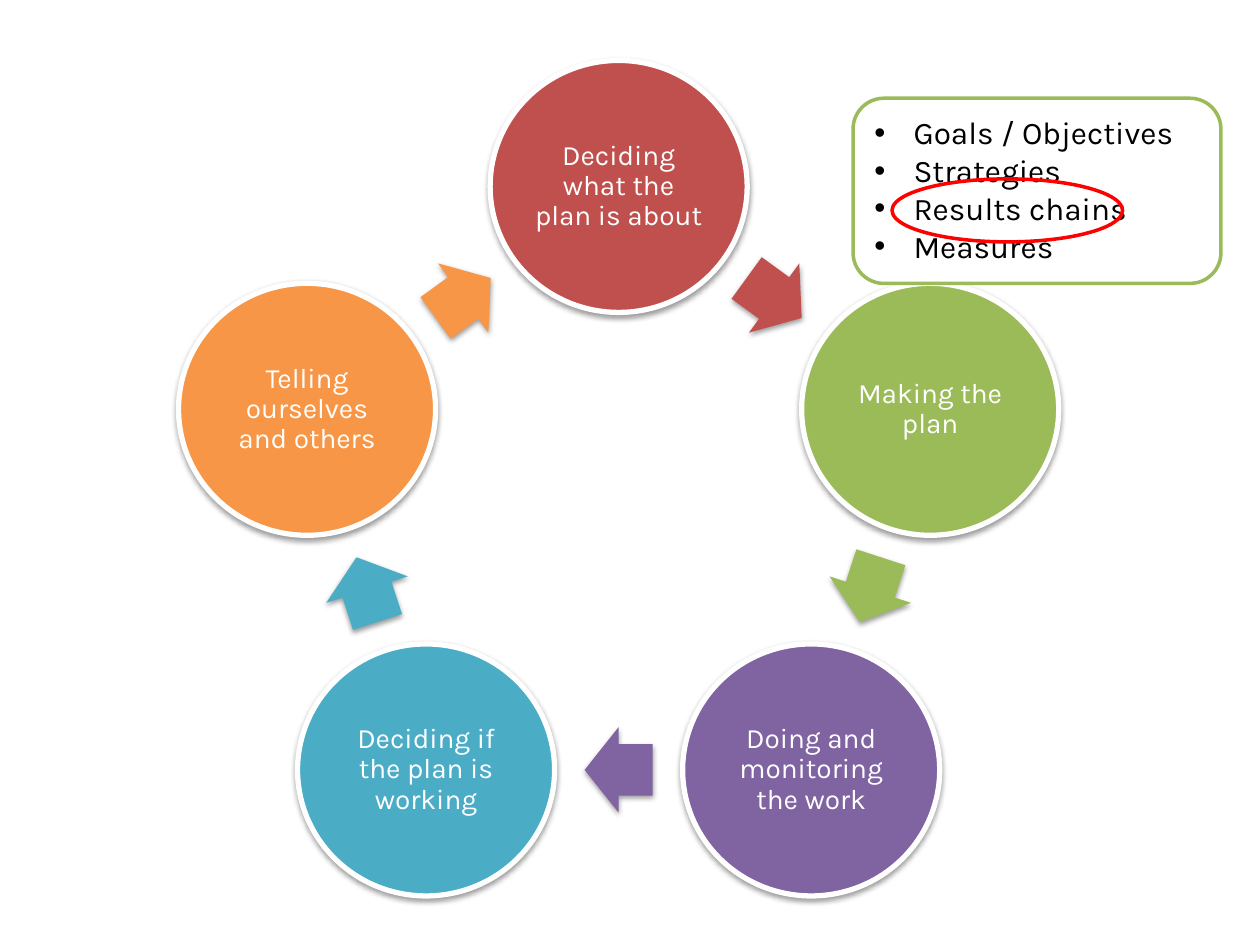
"""Build a slide with a five-step planning cycle and a call-out list."""
import math

import lxml.etree
import pptx
import pptx.dml.color
import pptx.enum.shapes
import pptx.enum.text
import pptx.oxml
import pptx.oxml.ns
import pptx.util

Inches = pptx.util.Inches
Pt = pptx.util.Pt
RGBColor = pptx.dml.color.RGBColor
Kind = pptx.enum.shapes.MSO_SHAPE
Align = pptx.enum.text.PP_ALIGN
Anchor = pptx.enum.text.MSO_ANCHOR

WHITE = RGBColor(0xFF, 0xFF, 0xFF)
BLACK = RGBColor(0x00, 0x00, 0x00)
BRICK = RGBColor(0xC0, 0x50, 0x4D)
GREEN = RGBColor(0x9B, 0xBB, 0x59)
PURPLE = RGBColor(0x80, 0x64, 0xA2)
TEAL = RGBColor(0x4B, 0xAC, 0xC6)
ORANGE = RGBColor(0xF7, 0x96, 0x46)
RED = RGBColor(0xFF, 0x00, 0x00)

FONT = "Karla"
MID = (4.91, 4.04)
STEPS = [
    ("Deciding what the plan is about", BRICK),
    ("Making the plan", GREEN),
    ("Doing and monitoring the work", PURPLE),
    ("Deciding if the plan is working", TEAL),
    ("Telling ourselves and others", ORANGE),
]
ITEMS = ["Goals / Objectives", "Strategies", "Results chains", "Measures"]


def add_form(slide, kind, box, fill=None, line=None, width=0):
    """Add a preset shape with plain fill and line."""
    form = slide.shapes.add_shape(kind, *[Inches(n) for n in box])
    form.shadow.inherit = False
    if fill is None:
        form.fill.background()
    else:
        form.fill.solid()
        form.fill.fore_color.rgb = fill
    if line is None:
        form.line.fill.background()
    else:
        form.line.color.rgb = line
        form.line.width = Pt(width)
    return form


def add_shade(form):
    """Give a shape a soft shadow straight below it."""
    name = pptx.oxml.ns.qn("a:effectLst")
    space = pptx.oxml.ns.nsdecls("a")
    form._element.spPr.find(name).append(pptx.oxml.parse_xml(
        f'<a:outerShdw {space} blurRad="{Pt(3.1)}" dist="{Pt(1.6)}" '
        'dir="5400000" rotWithShape="0"><a:srgbClr val="000000">'
        '<a:alpha val="38000"/></a:srgbClr></a:outerShdw>'))


def set_font(para, size, color):
    """Format every run of a paragraph."""
    for run in para.runs:
        run.font.name = FONT
        run.font.size = Pt(size)
        run.font.color.rgb = color


def ring_box(angle, reach, size):
    """Return the box centred at a clockwise angle on the ring."""
    turn = math.radians(angle)
    left = MID[0] + reach[0] * math.sin(turn) - size[0] / 2
    top = MID[1] - reach[1] * math.cos(turn) - size[1] / 2
    return left, top, *size


def add_step(slide, angle, text, color):
    """Add one round step with its label."""
    box = ring_box(angle, (2.6, 2.56), (2.04, 2))
    step = add_form(slide, Kind.OVAL, box, color, WHITE, 3)
    add_shade(step)
    frame = step.text_frame
    frame.word_wrap = True
    frame.vertical_anchor = Anchor.MIDDLE
    frame.margin_left = frame.margin_right = Inches(0.04)
    frame.margin_top = frame.margin_bottom = Inches(0.04)
    frame.text = text
    para = frame.paragraphs[0]
    para.alignment = Align.CENTER
    para.line_spacing = 0.9
    set_font(para, 16, WHITE)


def add_arrow(slide, angle, color):
    """Add the block arrow that leads on to the next step."""
    box = ring_box(angle, (2.1, 2.07), (0.54, 0.68))
    arrow = add_form(slide, Kind.RIGHT_ARROW, box, color)
    arrow.adjustments[0] = 0.6
    arrow.adjustments[1] = 0.5
    arrow.rotation = angle
    add_shade(arrow)


def add_list(slide, box, items):
    """Add the rounded call-out with its bullet list."""
    panel = add_form(slide, Kind.ROUNDED_RECTANGLE, box, WHITE, GREEN, 2)
    frame = panel.text_frame
    frame.word_wrap = True
    frame.vertical_anchor = Anchor.TOP
    frame.text = "\n".join(items)
    for para in frame.paragraphs:
        para.alignment = Align.LEFT
        props = para._p.get_or_add_pPr()
        props.set("marL", str(Inches(0.31)))
        props.set("indent", str(-Inches(0.31)))
        for tag, key, value in (("a:buFont", "typeface", "Arial"),
                                ("a:buChar", "char", "•")):
            name = pptx.oxml.ns.qn(tag)
            lxml.etree.SubElement(props, name).set(key, value)
        set_font(para, 18, BLACK)


def main():
    """Build and save the deck."""
    deck = pptx.Presentation()
    deck.slide_width = Inches(10)
    deck.slide_height = Inches(7.5)
    slide = deck.slides.add_slide(deck.slide_layouts[6])
    pitch = 360 / len(STEPS)
    for i, (text, color) in enumerate(STEPS):
        add_step(slide, i * pitch, text, color)
        add_arrow(slide, (i + 0.5) * pitch, color)
    add_list(slide, (6.77, 0.78, 2.92, 1.47), ITEMS)
    add_form(slide, Kind.OVAL, (7.08, 1.42, 1.83, 0.5), line=RED, width=2)
    deck.save("out.pptx")


if __name__ == "__main__":
    main()
